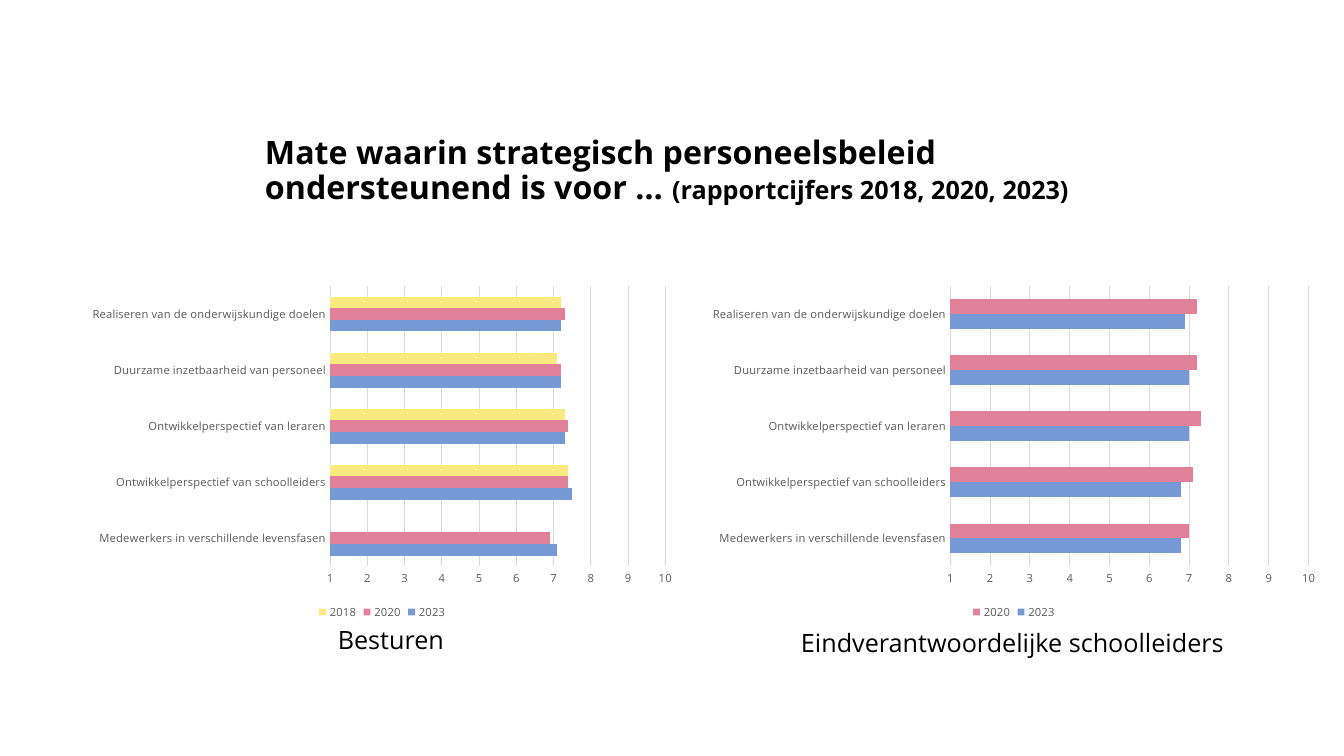
from dataclasses import dataclass

from pptx import Presentation
from pptx import util as u
from pptx.chart.data import CategoryChartData
from pptx.dml.color import RGBColor
from pptx.enum import chart as charts, text

TITLE = [
    ("Mate waarin strategisch personeelsbeleid ondersteunend is voor … ", 23),
    ("(rapportcijfers 2018, 2020, 2023)", 18),
]
CATEGORIES = [
    "Medewerkers in verschillende levensfasen",
    "Ontwikkelperspectief van schoolleiders",
    "Ontwikkelperspectief van leraren",
    "Duurzame inzetbaarheid van personeel",
    "Realiseren van de onderwijskundige doelen",
]
PANELS = [
    {
        "caption": "Besturen",
        "caption_box": (3.15, 6.19, 1.46, 0.3),
        "chart_box": (0.8, 2.77, 5.99, 3.42),
        "scores": {
            "2023": [7.1, 7.5, 7.3, 7.2, 7.2],
            "2020": [6.9, 7.4, 7.4, 7.2, 7.3],
            "2018": [None, 7.4, 7.3, 7.1, 7.2],
        },
    },
    {
        "caption": "Eindverantwoordelijke schoolleiders",
        "caption_box": (7.85, 6.22, 4.4, 0.3),
        "chart_box": (6.95, 2.77, 6.23, 3.42),
        "scores": {
            "2023": [6.8, 6.8, 7, 7, 6.9],
            "2020": [7, 7.1, 7.3, 7.2, 7.2],
        },
    },
]


@dataclass(frozen=True)
class Theme:
    font: str = "Open Sans"
    chart_font: str = "Calibri"
    ink: str = "000000"
    label: str = "595959"
    grid: str = "D9D9D9"
    caption_size: int = 18
    chart_size: int = 10
    label_size: int = 8
    years: tuple = (("2023", "7698D4"), ("2020", "E08099"), ("2018", "FAE980"))


THEME = Theme()


def inches(box):
    return [u.Inches(length) for length in box]


def format_font(font, size, color=THEME.ink, name=THEME.font, bold=False):
    font.name = name
    font.size = u.Pt(size)
    font.bold = bold
    font.color.rgb = RGBColor.from_string(color)


def add_run(paragraph, content, **font_format):
    run = paragraph.add_run()
    run.text = content
    format_font(run.font, **font_format)


def format_line(line):
    line.color.rgb = RGBColor.from_string(THEME.grid)
    line.width = u.Pt(0.75)


def add_title(slide):
    title = slide.shapes.title
    title.left, title.top, title.width, title.height = inches((2.53, 1.31, 8.27, 1.37))
    frame = title.text_frame
    frame.word_wrap = True
    frame.auto_size = text.MSO_AUTO_SIZE.NONE
    frame.vertical_anchor = text.MSO_ANCHOR.TOP
    paragraph = frame.paragraphs[0]
    paragraph.alignment = text.PP_ALIGN.LEFT
    paragraph.line_spacing = 0.9
    for content, size in TITLE:
        add_run(paragraph, content, size=size, bold=True)


def add_caption(slide, content, box):
    frame = slide.shapes.add_textbox(*inches(box)).text_frame
    frame.word_wrap = True
    frame.auto_size = text.MSO_AUTO_SIZE.SHAPE_TO_FIT_TEXT
    frame.margin_left = frame.margin_right = frame.margin_top = frame.margin_bottom = 0
    paragraph = frame.paragraphs[0]
    paragraph.alignment = text.PP_ALIGN.CENTER
    add_run(paragraph, content, size=THEME.caption_size)


def add_score_chart(slide, scores, box):
    data = CategoryChartData(number_format="General")
    data.categories = CATEGORIES
    for year, values in scores.items():
        data.add_series(year, values)
    chart = slide.shapes.add_chart(
        charts.XL_CHART_TYPE.BAR_CLUSTERED, *inches(box), data
    ).chart
    chart.has_title = False
    format_font(chart.font, THEME.chart_size, name=THEME.chart_font)

    plot = chart.plots[0]
    plot.gap_width = 182
    plot.overlap = 0
    plot.vary_by_categories = False
    colors = dict(THEME.years)
    for series in plot.series:
        series.invert_if_negative = False
        series.format.fill.solid()
        series.format.fill.fore_color.rgb = RGBColor.from_string(colors[series.name])

    category_axis, value_axis = chart.category_axis, chart.value_axis
    for axis in (category_axis, value_axis):
        axis.major_tick_mark = axis.minor_tick_mark = charts.XL_TICK_MARK.NONE
        format_font(axis.tick_labels.font, THEME.label_size, THEME.label)
    category_axis.has_major_gridlines = False
    format_line(category_axis.format.line)
    value_axis.minimum_scale, value_axis.maximum_scale = 1, 10
    value_axis.major_unit = 1
    value_axis.tick_labels.number_format = "0"
    value_axis.tick_labels.number_format_is_linked = False
    value_axis.has_major_gridlines = True
    format_line(value_axis.major_gridlines.format.line)
    value_axis.format.line.fill.background()

    chart.has_legend = True
    chart.legend.position = charts.XL_LEGEND_POSITION.BOTTOM
    chart.legend.include_in_layout = False
    format_font(chart.legend.font, THEME.label_size, THEME.label)


def main():
    presentation = Presentation()
    presentation.slide_width, presentation.slide_height = inches((13.34, 7.5))
    slide = presentation.slides.add_slide(presentation.slide_layouts[5])
    add_title(slide)
    for panel in PANELS:
        add_score_chart(slide, panel["scores"], panel["chart_box"])
        add_caption(slide, panel["caption"], panel["caption_box"])
    presentation.save("out.pptx")


if __name__ == "__main__":
    main()
